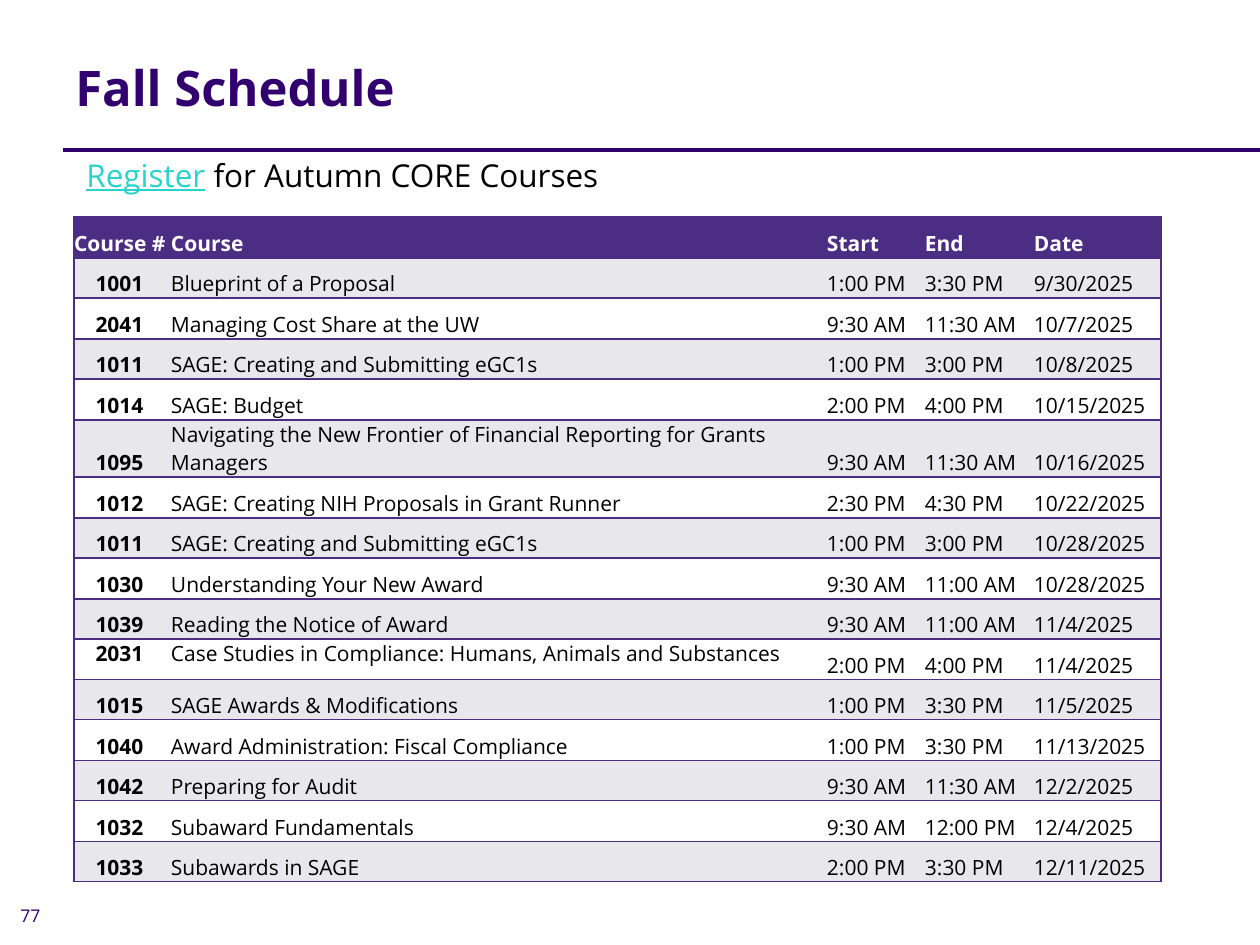
from lxml import etree
from pptx import Presentation
from pptx import util as u
from pptx.dml.color import RGBColor
from pptx.enum import shapes, text
from pptx.oxml import ns

PX = u.Inches(1) / 126
FONT = "Open Sans"
PURPLE, INDIGO, BLACK, WHITE = "4B2E83", "32006E", "000000", "FFFFFF"
BAND, LINK = "E8E7EC", "2AD2C9"
NO_STYLE = "{2D5ABB26-0587-4C30-8999-92F81FD0307C}"

HEADER = ("Course #", "Course", "Start", "End", "Date")
COURSES = [
    ("1001", "Blueprint of a Proposal", "1:00 PM", "3:30 PM", "9/30/2025"),
    ("2041", "Managing Cost Share at the UW", "9:30 AM", "11:30 AM", "10/7/2025"),
    ("1011", "SAGE: Creating and Submitting eGC1s", "1:00 PM", "3:00 PM", "10/8/2025"),
    ("1014", "SAGE: Budget", "2:00 PM", "4:00 PM", "10/15/2025"),
    ("1095", "Navigating the New Frontier of Financial Reporting for Grants Managers",
     "9:30 AM", "11:30 AM", "10/16/2025"),
    ("1012", "SAGE: Creating NIH Proposals in Grant Runner", "2:30 PM", "4:30 PM", "10/22/2025"),
    ("1011", "SAGE: Creating and Submitting eGC1s", "1:00 PM", "3:00 PM", "10/28/2025"),
    ("1030", "Understanding Your New Award", "9:30 AM", "11:00 AM", "10/28/2025"),
    ("1039", "Reading the Notice of Award", "9:30 AM", "11:00 AM", "11/4/2025"),
    ("2031", "Case Studies in Compliance: Humans, Animals and Substances",
     "2:00 PM", "4:00 PM", "11/4/2025"),
    ("1015", "SAGE Awards & Modifications", "1:00 PM", "3:30 PM", "11/5/2025"),
    ("1040", "Award Administration: Fiscal Compliance", "1:00 PM", "3:30 PM", "11/13/2025"),
    ("1042", "Preparing for Audit", "9:30 AM", "11:30 AM", "12/2/2025"),
    ("1032", "Subaward Fundamentals", "9:30 AM", "12:00 PM", "12/4/2025"),
    ("1033", "Subawards in SAGE", "2:00 PM", "3:30 PM", "12/11/2025"),
]
COL_WIDTHS = (97, 656, 98, 109, 127)
TWO_LINE_ROW, TOP_ALIGNED_ROW = 5, 10


def px(n):
    return u.Emu(round(n * PX))


def color(hex_string):
    return RGBColor.from_string(hex_string)


def style(r, size, hex_string, bold=False, underline=False):
    r.font.name, r.font.size = FONT, u.Pt(size)
    r.font.bold, r.font.underline = bold, underline
    r.font.color.rgb = color(hex_string)


def add_text(s, box, runs):
    """Runs are (words, size, colour, bold, underline)."""
    tf = s.shapes.add_textbox(*map(px, box)).text_frame
    tf.word_wrap = True
    tf.vertical_anchor = text.MSO_ANCHOR.MIDDLE
    for words, *look in runs:
        r = tf.paragraphs[0].add_run()
        r.text = words
        style(r, *look)


def add_heading(s, box):
    x, y, w, h = box
    rule_y = y + 112
    rule = s.shapes.add_connector(shapes.MSO_CONNECTOR.STRAIGHT,
                                  px(x), px(rule_y), px(x + w), px(rule_y))
    rule.line.color.rgb = color("2F006D")
    rule.line.width = u.Pt(2.25)
    etree.SubElement(rule._element.spPr, ns.qn("a:effectLst"))
    title_box = s.shapes.title
    add_text(s, (x, y, 1134, 98), [("Fall Schedule", 28, INDIGO, True)])
    add_text(s, (x + 11, y + 113, 617, h - 113),
             [("Register", 18, LINK, False, True),
              (" for Autumn CORE Courses", 18, BLACK)])


def set_borders(cell, sides):
    tc_pr = cell._tc.get_or_add_tcPr()
    for side in sides:
        ln = etree.SubElement(tc_pr, ns.qn("a:ln" + side), w=str(u.Pt(1)))
        fill = etree.SubElement(ln, ns.qn("a:solidFill"))
        etree.SubElement(fill, ns.qn("a:srgbClr"), val=PURPLE)


def fill_cell(cell, words, row, col):
    head, number = row == 0, col == 0
    last = col == len(HEADER) - 1
    set_borders(cell, ("L" if number else "") + ("R" if last else "") + "TB")
    cell.fill.solid()
    cell.fill.fore_color.rgb = color(PURPLE if head else BAND if row % 2 else WHITE)
    cell.margin_left = cell.margin_right = cell.margin_top = cell.margin_bottom = 0
    on_top = row == TOP_ALIGNED_ROW and col < 2
    cell.vertical_anchor = text.MSO_ANCHOR.TOP if on_top else text.MSO_ANCHOR.BOTTOM
    cell.text_frame.text = words
    p = cell.text_frame.paragraphs[0]
    if number and not head:
        p.alignment = text.PP_ALIGN.CENTER
        cell.margin_right = px(6)
    style(p.runs[0], 12, WHITE if head else BLACK, head or number)


def add_schedule(s, box):
    rows = [HEADER] + COURSES
    table = s.shapes.add_table(len(rows), len(HEADER), *map(px, box)).table
    table._tbl.tblPr.find(ns.qn("a:tableStyleId")).text = NO_STYLE
    for column, width in zip(table.columns, COL_WIDTHS):
        column.width = px(width)
    for i, row in enumerate(rows):
        table.rows[i].height = px(57 if i == TWO_LINE_ROW else 41 - i % 2)
        for j, words in enumerate(row):
            fill_cell(table.cell(i, j), words, i, j)


def build():
    prs = Presentation()
    prs.slide_width, prs.slide_height = px(1260), px(945)
    s = prs.slides.add_slide(prs.slide_layouts[6])
    # Title, rule and registration line
    add_heading(s, (63, 38, 1197, 160))
    # Course table
    add_schedule(s, (74, 217, sum(COL_WIDTHS), 665))
    # Page number
    add_text(s, (8, 898, 55, 34), [("77", 10, INDIGO)])
    prs.save("out.pptx")


if __name__ == "__main__":
    build()
